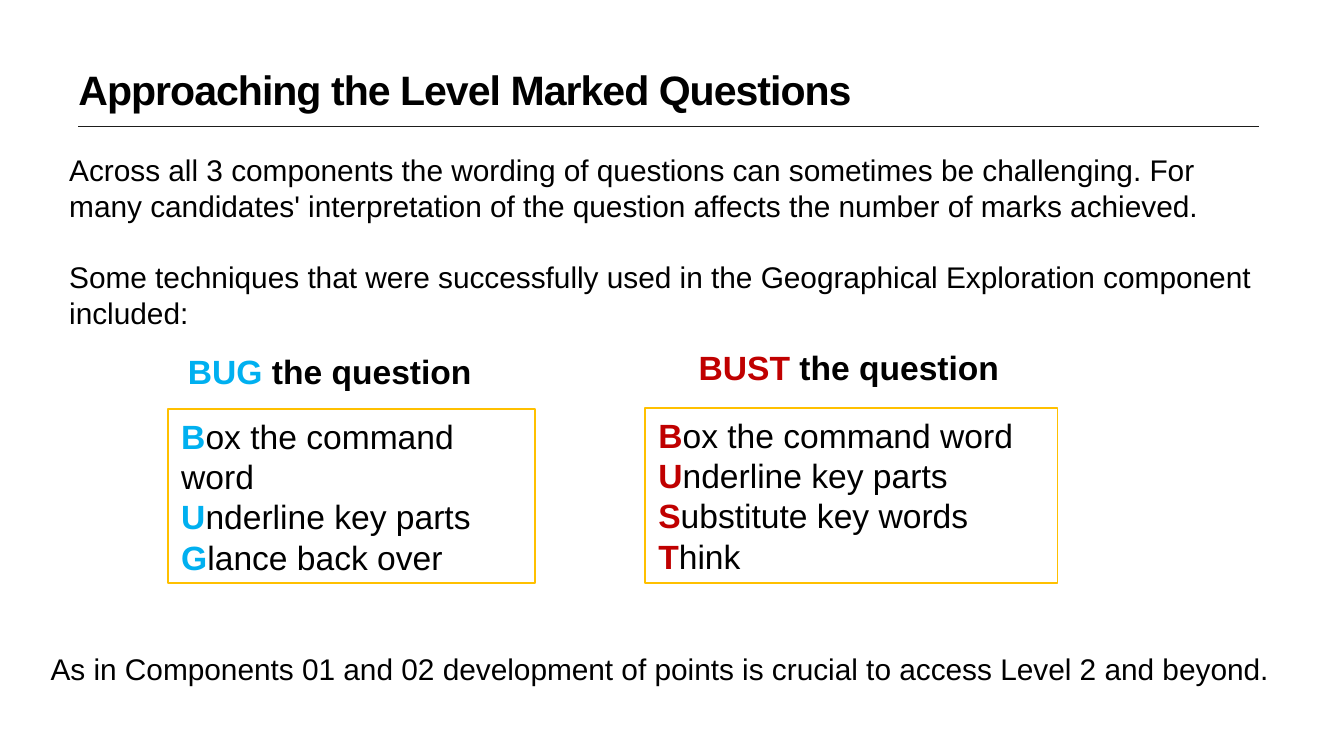
from pptx import Presentation
from pptx.dml.color import RGBColor
from pptx.enum.shapes import MSO_CONNECTOR as Link, MSO_SHAPE as Shape
from pptx.enum.text import MSO_ANCHOR as Anchor, PP_ALIGN as Align
from pptx.oxml.ns import qn
from pptx.util import Pt

BLACK, BLUE, RED, GOLD, RULE = "000000", "00B0F0", "C00000", "FFC000", "1D1D1B"
INTRO = [
    [("Across all 3 components the wording of questions can sometimes be "
      "challenging. For many candidates' interpretation of the question "
      "affects the number of marks achieved.", {})],
    [("Some techniques that were successfully used in the Geographical "
      "Exploration component included:", {})],
]
CLOSE = ("As in Components 01 and 02 development of points is crucial to "
         "access Level 2 and beyond.")


def color(code):
    return RGBColor.from_string(code)


def write(frame, text, size=18, bold=False, hue=BLACK, inset=None, gap=0,
          track=0, anchor=Anchor.TOP):
    """Fill a frame with a string, or with paragraphs of (words, format) runs."""
    frame.word_wrap = True
    frame.vertical_anchor = anchor
    if inset is not None:
        frame.margin_left = frame.margin_right = Pt(inset)
        frame.margin_top = frame.margin_bottom = Pt(inset)
    paras = [[(text, {})]] if isinstance(text, str) else text
    for i, runs in enumerate(paras):
        para = frame.add_paragraph() if i else frame.paragraphs[0]
        para.alignment = Align.LEFT
        if i and gap:
            para.space_before = Pt(gap)
        for words, look in runs:
            run = para.add_run()
            run.text = words
            font = run.font
            font.name, font.size = "Arial", Pt(size)
            font.bold = look.get("bold", bold)
            font.color.rgb = color(look.get("hue", hue))
            if track:
                run._r.get_or_add_rPr().set("spc", str(round(track * 100)))


def label(slide, x, y, w, h, text, **look):
    box = slide.shapes.add_textbox(Pt(x), Pt(y), Pt(w), Pt(h))
    write(box.text_frame, text, **look)


def rule(slide, x, y, w):
    line = slide.shapes.add_connector(
        Link.STRAIGHT, Pt(x), Pt(y), Pt(x + w), Pt(y))
    line.line.color.rgb = color(RULE)
    line.line.width = Pt(0.5)
    props = line._element.spPr
    props.append(props.makeelement(qn("a:effectLst"), {}))


def frame(slide, x, y, w, h, text):
    box = slide.shapes.add_shape(Shape.RECTANGLE, Pt(x), Pt(y), Pt(w), Pt(h))
    box.shadow.inherit = False
    box.fill.background()
    box.line.color.rgb = color(GOLD)
    box.line.width = Pt(1)
    write(box.text_frame, text, anchor=Anchor.MIDDLE)


def steps(paras, hue):
    """Set the first letter of each phrase in bold colour."""
    return [[run for phrase in phrases
             for run in ((phrase[0], {"bold": True, "hue": hue}),
                         (phrase[1:], {}))]
            for phrases in paras]


def main():
    deck = Presentation()
    deck.slide_width, deck.slide_height = Pt(720), Pt(405)
    slide = deck.slides.add_slide(deck.slide_layouts[6])

    rule(slide, 42, 67.9, 632.5)
    label(slide, 42, 34.6, 632.5, 26.6, "Approaching the Level Marked Questions",
          size=22, bold=True, inset=0, track=-0.5)
    label(slide, 30, 77.8, 660, 104.4, INTRO, size=16, gap=19)

    bug = [["Box the command word"],
           ["Underline key parts ", "Glance back over"]]
    bust = [["Box the command word"],
            ["Underline key parts ", "Substitute key words"],
            ["Think"]]
    for name, hue, paras, head, body in (
            ("BUG", BLUE, bug, (93.6, 184.3, 170), (90, 219, 196.8)),
            ("BUST", RED, bust, (367.2, 182.2, 178.6), (345.6, 218.6, 221))):
        label(slide, *head, 28.8,
              [[(name, {"hue": hue}), (" the question", {})]], bold=True)
        frame(slide, *body, 93.6, steps(paras, hue))

    label(slide, 20, 344.9, 711, 26.6, CLOSE, size=16)
    deck.save("out.pptx")


if __name__ == "__main__":
    main()
